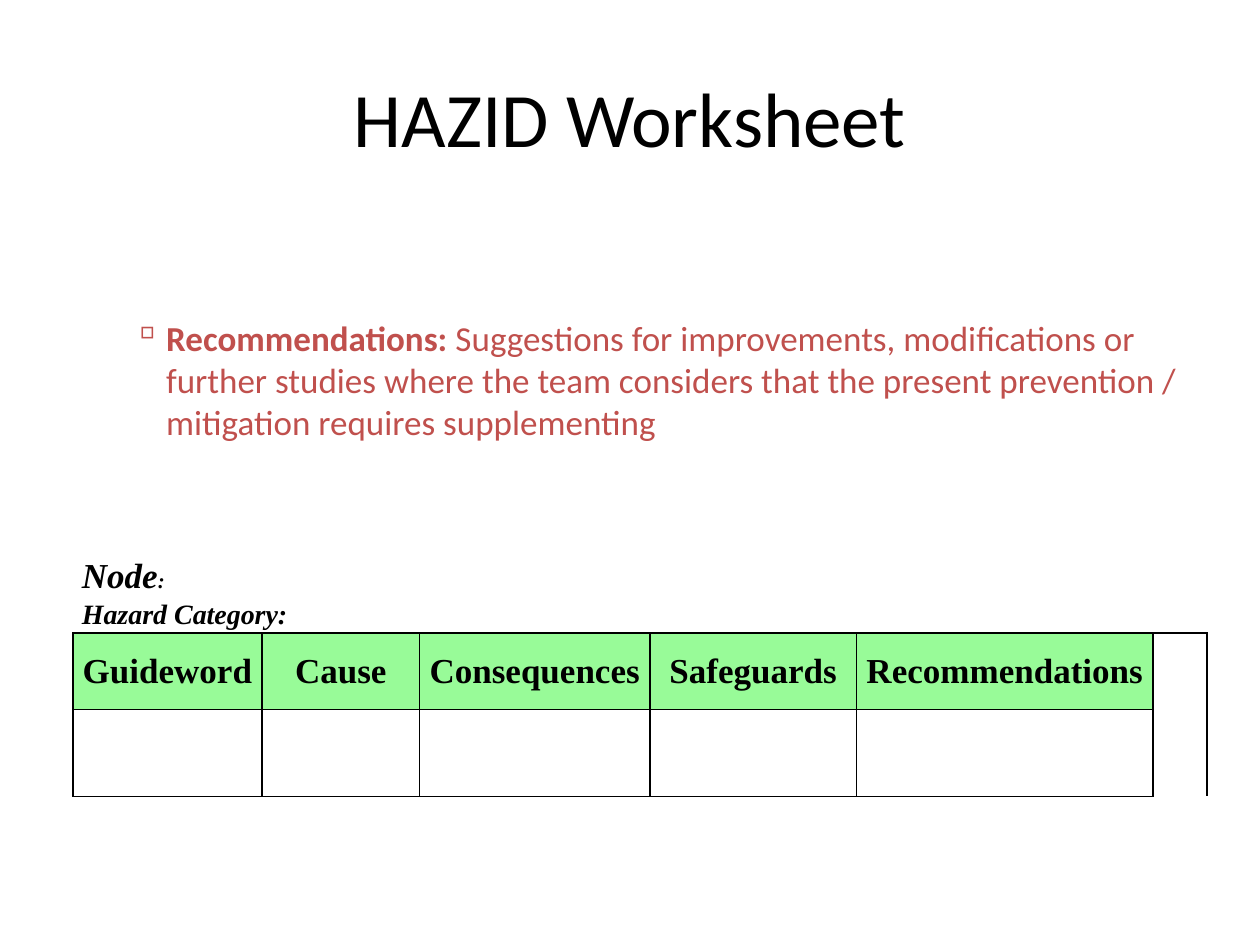
from dataclasses import dataclass

from lxml import etree
from pptx import Presentation
from pptx.dml.color import RGBColor
from pptx.enum.text import MSO_ANCHOR, PP_ALIGN
from pptx.oxml.ns import qn
from pptx.util import Cm, Pt

MIDDLE = MSO_ANCHOR.MIDDLE
CENTER = PP_ALIGN.CENTER
LEFT = PP_ALIGN.LEFT
NO_STYLE = "{2D5ABB26-0587-4C30-8999-92F81FD0307C}"


@dataclass(frozen=True)
class Theme:
    ink: str = "000000"
    accent: str = "C0504D"
    header: str = "98FB98"
    sans: str = "Calibri"
    serif: str = "Times New Roman"
    title: int = 44
    body: int = 20
    category: int = 16
    small: int = 12


THEME = Theme()
COLUMNS = (3.81, 3.18, 1.52, 3.12, 4.17, 5.97, 1.09)
ROWS = (0.56, 0.56, 1.55, 1.75)
HEADINGS = {0: "Guideword", 1: "Cause", 2: "Consequences",
            4: "Safeguards", 5: "Recommendations"}
MERGES = (((0, 0), (0, 2)), ((0, 3), (0, 6)), ((1, 0), (1, 2)),
          ((1, 3), (1, 6)), ((2, 2), (2, 3)), ((3, 2), (3, 3)))


def add_span(para, text, size, font, color, bold=False, italic=False):
    span = para.add_run()
    span.text = text
    span.font.size = Pt(size)
    span.font.name = font
    span.font.bold = bold
    span.font.italic = italic
    span.font.color.rgb = RGBColor.from_string(color)


def add_text_box(page, left, top, width, height):
    box = page.shapes.add_textbox(Cm(left), Cm(top), Cm(width), Cm(height))
    box.text_frame.word_wrap = True
    return box.text_frame


def add_title(page, left, top, width, height):
    frame = add_text_box(page, left, top, width, height)
    frame.vertical_anchor = MIDDLE
    para = frame.paragraphs[0]
    para.alignment = CENTER
    add_span(para, "HAZID Worksheet", THEME.title, THEME.sans, THEME.ink)


def add_definition(page, left, top, width, height):
    para = add_text_box(page, left, top, width, height).paragraphs[0]
    para.level = 1
    para.alignment = LEFT
    properties = para._p.get_or_add_pPr()
    properties.set("marL", str(Cm(1.83)))
    properties.set("indent", str(Cm(-0.69)))
    bullet_color = etree.SubElement(properties, qn("a:buClr"))
    etree.SubElement(bullet_color, qn("a:srgbClr"), val=THEME.accent)
    etree.SubElement(properties, qn("a:buChar"), char="▫")
    add_span(para, "Recommendations:", THEME.body, THEME.sans, THEME.accent, bold=True)
    add_span(para, " Suggestions for improvements, modifications or further studies "
             "where the team considers that the present prevention / mitigation "
             "requires supplementing", THEME.body, THEME.sans, THEME.accent)


def add_borders(cell, sides):
    properties = cell._tc.get_or_add_tcPr()
    for side in sides:
        line = etree.SubElement(properties, qn(f"a:ln{side}"), w=str(Pt(1)))
        fill = etree.SubElement(line, qn("a:solidFill"))
        etree.SubElement(fill, qn("a:srgbClr"), val=THEME.ink)


def format_cell(cell, row, column):
    cell.margin_left = cell.margin_right = Cm(0.18)
    cell.margin_top = cell.margin_bottom = 0
    if row >= 2:
        add_borders(cell, "LRTB" if column < len(COLUMNS) - 1 else "L")
    para = cell.text_frame.paragraphs[0]
    para._p.get_or_add_endParaRPr().set("sz", str(THEME.small * 100))
    if row == 2 and column < len(COLUMNS) - 1:
        cell.fill.solid()
        cell.fill.fore_color.rgb = RGBColor.from_string(THEME.header)
        cell.vertical_anchor = MIDDLE
        para.alignment = CENTER
        if column in HEADINGS:
            add_span(para, HEADINGS[column], THEME.body, THEME.serif, THEME.ink, bold=True)
    else:
        cell.fill.background()


def add_worksheet(page, left, top, width, height):
    frame = page.shapes.add_table(len(ROWS), len(COLUMNS), Cm(left), Cm(top),
                                  Cm(width), Cm(height))
    table = frame.table
    table.first_row = table.horz_banding = False
    table._tbl.tblPr.find(qn("a:tableStyleId")).text = NO_STYLE
    for column, share in zip(table.columns, COLUMNS):
        column.width = Cm(width * share / sum(COLUMNS))
    for row, row_height in zip(table.rows, ROWS):
        row.height = Cm(row_height)
    for start, end in MERGES:
        table.cell(*start).merge(table.cell(*end))
    for row in range(len(ROWS)):
        for column in range(len(COLUMNS)):
            format_cell(table.cell(row, column), row, column)
    labels = (("Node", 0, THEME.body), (":", 0, THEME.small),
              ("Hazard Category:", 1, THEME.category))
    for text, row, size in labels:
        para = table.cell(row, 0).text_frame.paragraphs[0]
        add_span(para, text, size, THEME.serif, THEME.ink, bold=True, italic=True)


def main():
    deck = Presentation()
    deck.slide_width, deck.slide_height = Cm(25.4), Cm(19.05)
    page = deck.slides.add_slide(deck.slide_layouts[6])
    add_title(page, 1.27, 0.76, 22.86, 3.18)
    add_worksheet(page, 1.47, 11.23, 22.86, 4.83)
    add_definition(page, 1.27, 6.25, 22.86, 12.01)
    deck.save("out.pptx")


if __name__ == "__main__":
    main()
